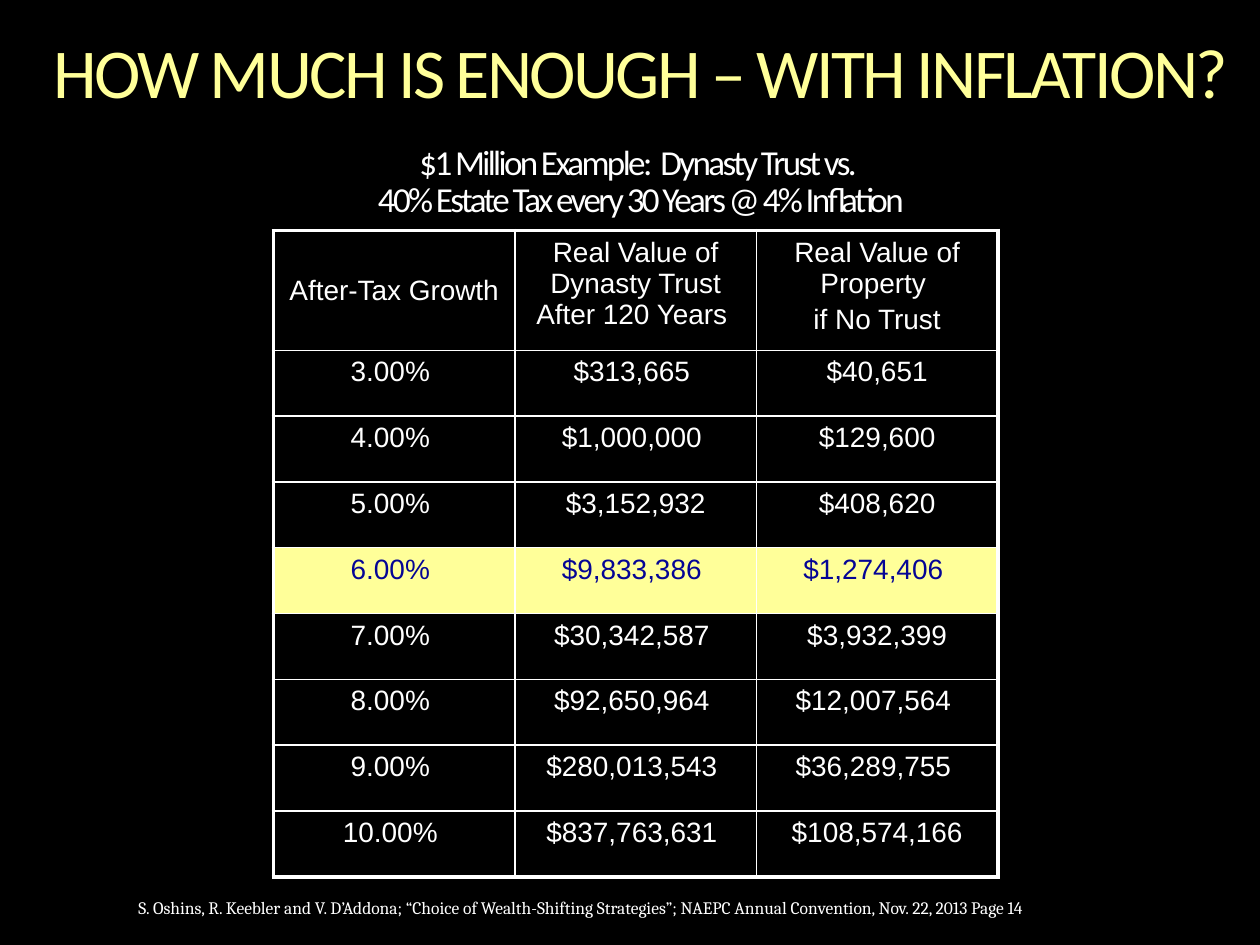
"""Build the slide comparing a dynasty trust with taxed property after inflation."""
from lxml.etree import SubElement
from pptx import Presentation
from pptx.dml.color import RGBColor
from pptx.enum.text import MSO_ANCHOR, PP_ALIGN
from pptx.oxml.ns import qn
from pptx.util import Inches, Pt

BLACK = RGBColor(0x00, 0x00, 0x00)
WHITE = RGBColor(0xFF, 0xFF, 0xFF)
YELLOW = RGBColor(0xFF, 0xFF, 0x99)
NAVY = RGBColor(0x05, 0x05, 0x95)

TABLE_ROWS = [
    ("After-Tax Growth ", "Real Value of Dynasty Trust\vAfter 120 Years ",
     "Real Value of Property \nif No Trust"),
    ("3.00% ", "$313,665 ", "$40,651"),
    ("4.00% ", "$1,000,000 ", "$129,600"),
    ("5.00% ", "$3,152,932", "$408,620"),
    ("6.00% ", "$9,833,386 ", "$1,274,406 "),
    ("7.00% ", "$30,342,587 ", "$3,932,399"),
    ("8.00% ", "$92,650,964 ", "$12,007,564 "),
    ("9.00% ", "$280,013,543 ", "$36,289,755 "),
    ("10.00% ", "$837,763,631 ", "$108,574,166"),
]
HIGHLIGHT_ROW = 4
LAST_ROW = len(TABLE_ROWS) - 1
LAST_COLUMN = 2
HEADER_HEIGHT = 0.95
TABLE_HEIGHT = 5.13


def add_text(slide, box, text, font_name, size, color, condensed=False):
    shape = slide.shapes.add_textbox(*(Inches(length) for length in box))
    frame = shape.text_frame
    frame.word_wrap = True
    frame.text = text
    paragraph = frame.paragraphs[0]
    paragraph.font.name = font_name
    paragraph.font.size = Pt(size)
    paragraph.font.color.rgb = color
    if condensed:
        paragraph.alignment = PP_ALIGN.CENTER
        paragraph.line_spacing = 0.9
        for run in paragraph.runs:
            run._r.get_or_add_rPr().set("spc", "-150")
    return frame


def add_border(cell, side, width):
    properties = cell._tc.get_or_add_tcPr()
    line = SubElement(properties, qn(f"a:ln{side}"), w=str(Pt(width)))
    fill = SubElement(line, qn("a:solidFill"))
    SubElement(fill, qn("a:srgbClr"), val=str(WHITE))


presentation = Presentation()
presentation.slide_width = Inches(10)
presentation.slide_height = Inches(7.5)
slide = presentation.slides.add_slide(presentation.slide_layouts[6])
slide.background.fill.solid()
slide.background.fill.fore_color.rgb = BLACK

subtitle = add_text(
    slide, (0.5, 1.14, 9.17, 0.61),
    "$1 Million Example:  Dynasty Trust vs. \v40% Estate Tax every 30 Years @ 4% Inflation",
    "Calibri", 20, WHITE, condensed=True)
subtitle.vertical_anchor = MSO_ANCHOR.BOTTOM
subtitle.margin_left = subtitle.margin_right = 0
subtitle.margin_top = subtitle.margin_bottom = 0

table_shape = slide.shapes.add_table(
    len(TABLE_ROWS), LAST_COLUMN + 1,
    Inches(2.17), Inches(1.83), Inches(5.75), Inches(TABLE_HEIGHT))
table = table_shape.table
for row_index, values in enumerate(TABLE_ROWS):
    height = (TABLE_HEIGHT - HEADER_HEIGHT) / LAST_ROW if row_index else HEADER_HEIGHT
    table.rows[row_index].height = Inches(height)
    highlighted = row_index == HIGHLIGHT_ROW
    for column_index, value in enumerate(values):
        cell = table.cell(row_index, column_index)
        outer_sides = {
            "L": column_index == 0,
            "R": column_index == LAST_COLUMN,
            "T": row_index == 0,
            "B": row_index == LAST_ROW,
        }
        for side, is_outer in outer_sides.items():
            add_border(cell, side, 2.25 if is_outer else 1)
        cell.fill.solid()
        cell.fill.fore_color.rgb = YELLOW if highlighted else BLACK
        cell.text = value
        for paragraph_index, paragraph in enumerate(cell.text_frame.paragraphs):
            paragraph.alignment = PP_ALIGN.CENTER
            if paragraph_index:
                paragraph.space_before = Pt(3.2)
            paragraph.font.name = "Arial"
            paragraph.font.size = Pt(16)
            paragraph.font.bold = False
            paragraph.font.color.rgb = NAVY if highlighted else WHITE
table.cell(0, 0).vertical_anchor = MSO_ANCHOR.MIDDLE

add_text(
    slide, (1, 7.07, 8.17, 0.27),
    "S. Oshins, R. Keebler and V. D’Addona; “Choice of Wealth-Shifting Strategies”; "
    "NAEPC Annual Convention, Nov. 22, 2013 Page 14",
    "Cambria", 10, WHITE)
add_text(
    slide, (0.17, 0.25, 9.83, 0.73), "HOW MUCH IS ENOUGH – WITH INFLATION?",
    "Calibri", 40, YELLOW, condensed=True)

presentation.save("out.pptx")
